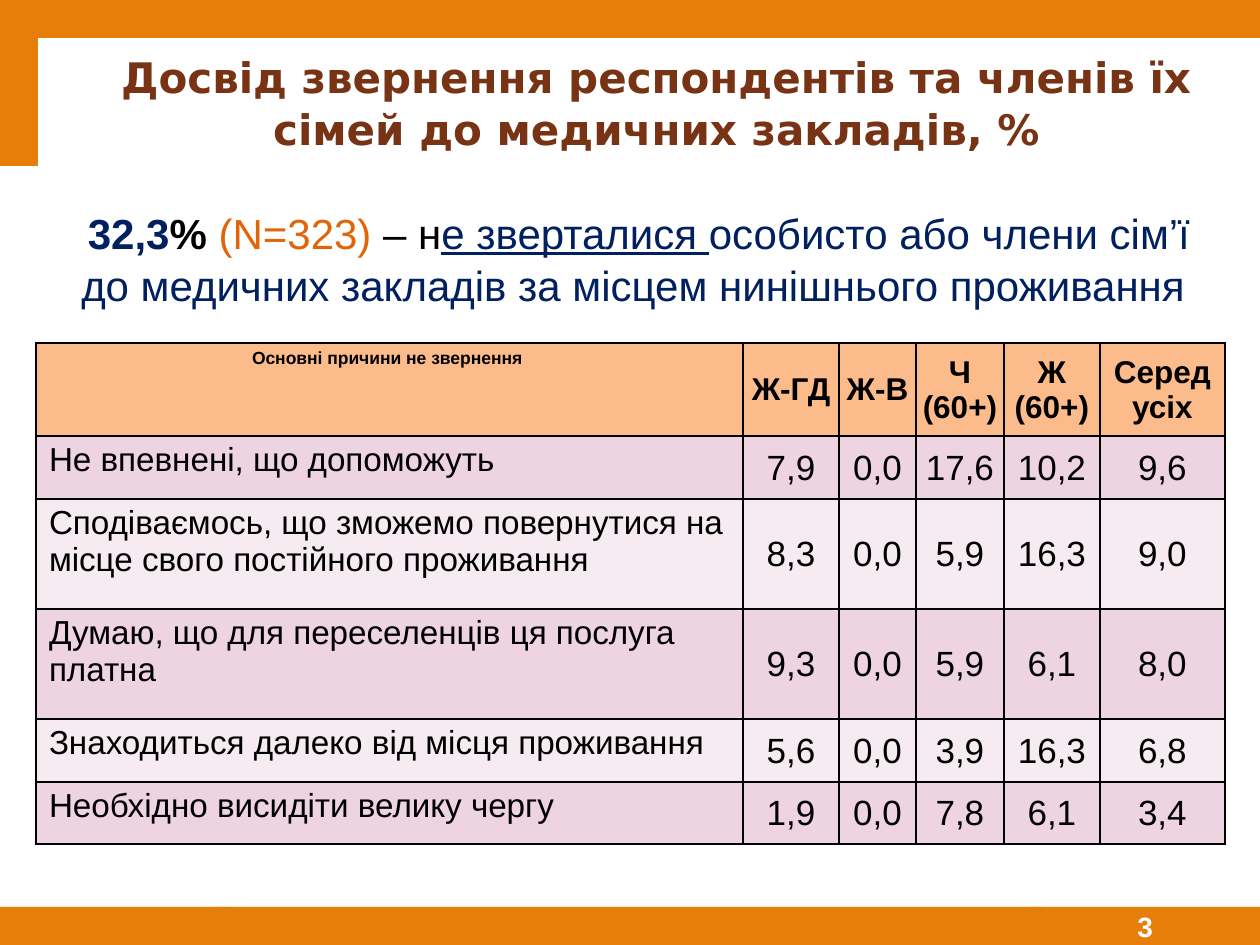
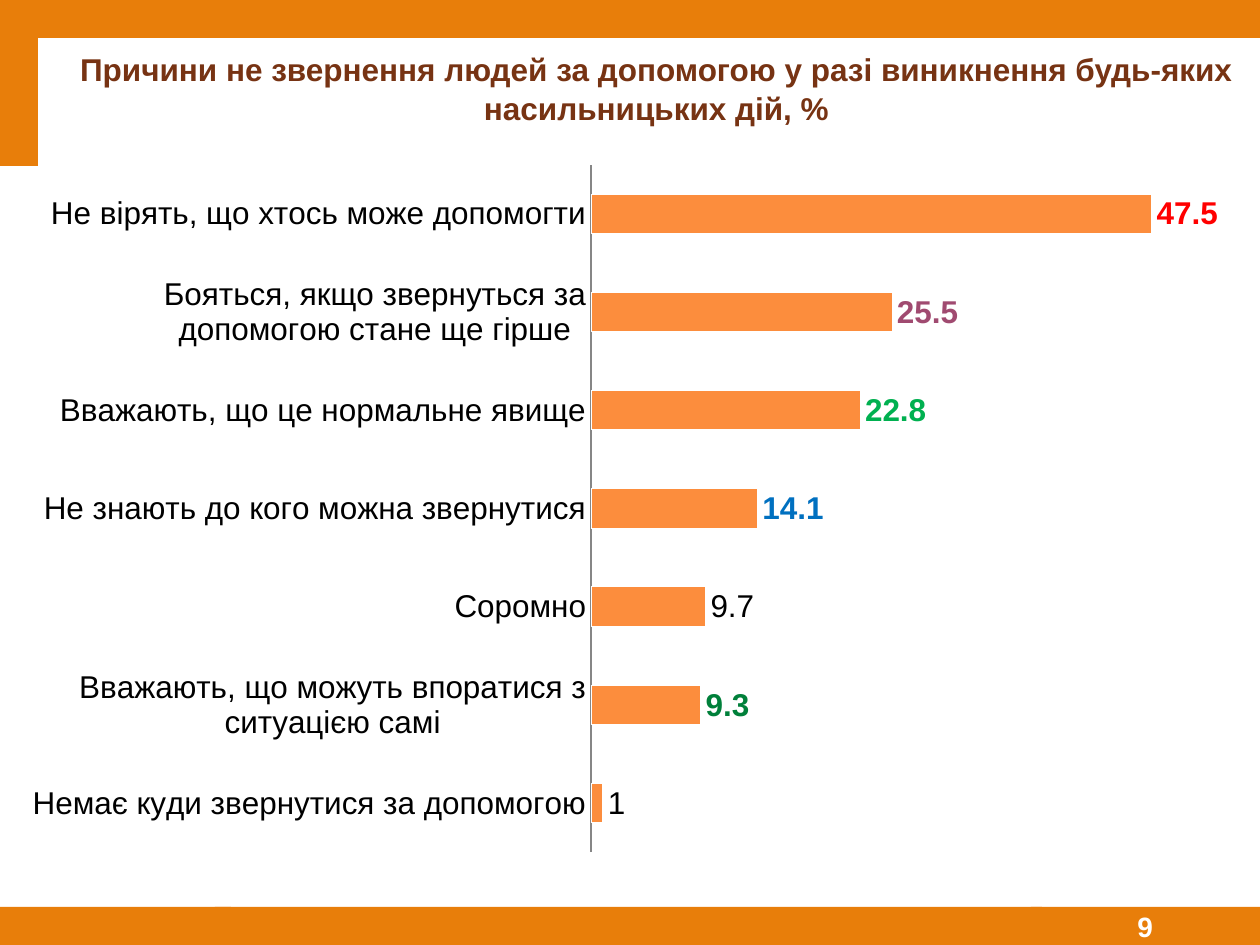
"""Build two survey slides: a table of reasons and a bar chart of reasons."""
from lxml import etree
from pptx import Presentation, util as u
from pptx.chart.data import CategoryChartData
from pptx.dml.color import RGBColor
from pptx.enum import chart as charts, shapes, text
from pptx.oxml import parse_xml
from pptx.oxml.ns import nsdecls, qn

ORANGE = RGBColor(0xE8, 0x7E, 0x0A)
BROWN = RGBColor(0x77, 0x33, 0x13)
NAVY = RGBColor(0x00, 0x20, 0x60)
RUST = RGBColor(0xE3, 0x64, 0x06)
BLACK = RGBColor(0x00, 0x00, 0x00)
WHITE = RGBColor(0xFF, 0xFF, 0xFF)
GREY = RGBColor(0x86, 0x86, 0x86)
PEACH = RGBColor(0xFC, 0xBB, 0x8B)
PINK = RGBColor(0xED, 0xD4, 0xE0)
PALE_PINK = RGBColor(0xF6, 0xEB, 0xF0)
BAR_ORANGE = RGBColor(0xFC, 0x8D, 0x3D)
RED = RGBColor(0xFF, 0x00, 0x00)
PLUM = RGBColor(0xA0, 0x4A, 0x70)
GREEN = RGBColor(0x00, 0xB0, 0x50)
BLUE = RGBColor(0x00, 0x70, 0xC0)
DARK_GREEN = RGBColor(0x00, 0x80, 0x3A)

BANDS = [(0, 907, 231, 38), (215, 907, 827, 38), (0, 0, 1260, 38), (0, 37, 38, 129)]
NUMBER_BAND = (1031, 907, 229, 38)

VISITS = {
    "title": "Досвід звернення респондентів та членів їх сімей до медичних закладів, %",
    "title_box": (38, 38, 1222, 127),
    "title_format": {"size": 24, "font": "DejaVu Sans"},
    "number": "3",
}
SUMMARY_BOX = (52, 168, 1174, 146)
SUMMARY = [
    ("32,3", {"color": NAVY, "bold": True}),
    ("% ", {"bold": True}),
    ("(N=323) ", {"color": RUST}),
    ("– н", {}),
    ("е зверталися ", {"color": NAVY, "underline": True}),
    ("особисто або члени сім’ї до медичних закладів за місцем нинішнього проживання ",
     {"color": NAVY}),
]
TABLE_CORNER = (36, 343)
COLUMN_WIDTHS = [707, 96, 77, 88, 96, 125]
ROW_HEIGHTS = [93, 63, 110, 110, 63, 62]
REASON_ROWS = [
    ("Основні причини не звернення ", "Ж-ГД", "Ж-В", "Ч (60+)", "Ж (60+)", "Серед усіх"),
    ("Не впевнені, що допоможуть", "7,9", "0,0", "17,6", "10,2", "9,6"),
    ("Сподіваємось, що зможемо повернутися на місце свого постійного проживання",
     "8,3", "0,0", "5,9", "16,3", "9,0"),
    ("Думаю, що для переселенців ця послуга платна", "9,3", "0,0", "5,9", "6,1", "8,0"),
    ("Знаходиться далеко від місця проживання", "5,6", "0,0", "3,9", "16,3", "6,8"),
    ("Необхідно висидіти велику чергу", "1,9", "0,0", "7,8", "6,1", "3,4"),
]

VIOLENCE = {
    "title": "Причини не звернення людей за допомогою у разі виникнення "
             "будь-яких насильницьких дій, %",
    "title_box": (38, 38, 1222, 100),
    "title_format": {"size": 18},
    "number": "9",
}
CHART_BOX = (26, 142, 1192, 733)
PLOT_LAYOUT = {"x": 0.475, "y": 0.031, "w": 0.496, "h": 0.938}
CHART_ROWS = [
    ("Немає куди звернутися за допомогою", 1, None),
    ("Вважають, що можуть впоратися з ситуацією самі", 9.3, DARK_GREEN),
    ("Соромно", 9.7, None),
    ("Не знають до кого можна звернутися", 14.1, BLUE),
    ("Вважають, що це нормальне явище", 22.8, GREEN),
    ("Бояться, якщо звернуться за допомогою стане ще гірше", 25.5, PLUM),
    ("Не вірять, що хтось може допомогти", 47.5, RED),
]


def px(length):
    return u.Emu(round(length * 914400 / 126))


def place(box):
    return [px(length) for length in box]


def write(frame, content, size=18, font="Arial", color=BLACK, bold=False, underline=False,
          align=text.PP_ALIGN.CENTER, spacing=None):
    """Write a string, or (string, overrides) runs, as one paragraph."""
    para = frame.paragraphs[0]
    para.alignment = align
    if spacing:
        para.line_spacing = spacing
    base = {"color": color, "bold": bold, "underline": underline}
    runs = [(content, {})] if isinstance(content, str) else content
    for words, changes in runs:
        style = {**base, **changes}
        span = para.add_run()
        span.text = words
        span.font.size = u.Pt(size)
        span.font.name = font
        span.font.bold = style["bold"]
        span.font.underline = style["underline"]
        span.font.color.rgb = style["color"]


def set_margins(target, left, top, right, bottom):
    target.margin_left, target.margin_top = px(left), px(top)
    target.margin_right, target.margin_bottom = px(right), px(bottom)


def add_text(page, box, content, margins, anchor=text.MSO_ANCHOR.MIDDLE, **style):
    frame = page.shapes.add_textbox(*place(box)).text_frame
    frame.word_wrap = True
    frame.vertical_anchor = anchor
    set_margins(frame, *margins)
    write(frame, content, **style)


def add_band(page, box):
    band = page.shapes.add_shape(shapes.MSO_SHAPE.RECTANGLE, *place(box))
    band.shadow.inherit = False
    band.fill.solid()
    band.fill.fore_color.rgb = ORANGE
    band.line.fill.background()
    return band


def add_page(deck, facts):
    page = deck.slides.add_slide(deck.slide_layouts[6])
    for box in BANDS:
        add_band(page, box)
    add_text(page, facts["title_box"], facts["title"], (28, 6, 13, 6),
             color=BROWN, bold=True, spacing=1.04, **facts["title_format"])
    frame = add_band(page, NUMBER_BAND).text_frame
    frame.vertical_anchor = text.MSO_ANCHOR.MIDDLE
    set_margins(frame, 0, 0, 107, 0)
    write(frame, facts["number"], size=16, color=WHITE, bold=True, align=text.PP_ALIGN.RIGHT)
    return page


def outline_cell(cell):
    props = cell._tc.get_or_add_tcPr()
    for side in ("lnL", "lnR", "lnT", "lnB"):
        line = etree.SubElement(props, qn(f"a:{side}"), w=str(u.Pt(1)))
        fill = etree.SubElement(line, qn("a:solidFill"))
        etree.SubElement(fill, qn("a:srgbClr"), val=str(BLACK))


def add_reason_table(page):
    size = (sum(COLUMN_WIDTHS), sum(ROW_HEIGHTS))
    table = page.shapes.add_table(len(REASON_ROWS), len(COLUMN_WIDTHS),
                                  *place(TABLE_CORNER + size)).table
    for column, width in zip(table.columns, COLUMN_WIDTHS):
        column.width = px(width)
    for r, (values, height) in enumerate(zip(REASON_ROWS, ROW_HEIGHTS)):
        table.rows[r].height = px(height)
        header = r == 0
        for c, value in enumerate(values):
            cell = table.cell(r, c)
            outline_cell(cell)
            cell.fill.solid()
            cell.fill.fore_color.rgb = PEACH if header else PINK if r % 2 else PALE_PINK
            align = text.PP_ALIGN.CENTER
            if c == 0:
                size = 10 if header else 19
                set_margins(cell, 13, 6, 13, 6)
                if not header:
                    align = text.PP_ALIGN.LEFT
            else:
                size = 18 if header else 20
                cell.vertical_anchor = text.MSO_ANCHOR.MIDDLE
                set_margins(cell, 1, 1, 1, 0)
            write(cell.text_frame, value, size=size, bold=header, align=align)


def set_plot_layout(chart):
    plot_area = chart._chartSpace.chart.plotArea
    for old in plot_area.findall(qn("c:layout")):
        plot_area.remove(old)
    modes = '<c:layoutTarget val="inner"/><c:xMode val="edge"/><c:yMode val="edge"/>'
    sizes = "".join(f'<c:{key} val="{value}"/>' for key, value in PLOT_LAYOUT.items())
    plot_area.insert(0, parse_xml(
        f'<c:layout {nsdecls("c")}><c:manualLayout>{modes}{sizes}</c:manualLayout></c:layout>'))


def add_reason_chart(page):
    data = CategoryChartData()
    data.categories = [name for name, _, _ in CHART_ROWS]
    data.add_series("Series 1", [value for _, value, _ in CHART_ROWS])
    chart = page.shapes.add_chart(charts.XL_CHART_TYPE.BAR_CLUSTERED,
                                  *place(CHART_BOX), data).chart
    chart.has_legend = False
    chart.has_title = False
    chart.font.size = u.Pt(18)
    chart.font.name = "Arial"
    chart.font.color.rgb = BLACK
    set_plot_layout(chart)

    names = chart.category_axis
    names.major_tick_mark = charts.XL_TICK_MARK.NONE
    names.format.line.color.rgb = GREY
    names.format.line.width = u.Pt(1)
    scale = chart.value_axis
    scale.minimum_scale, scale.maximum_scale = 0, 50
    scale.has_major_gridlines = False
    scale.visible = False

    plot = chart.plots[0]
    plot.vary_by_categories = False
    plot.gap_width, plot.overlap = 150, -25
    plot.has_data_labels = True
    plot.data_labels.show_value = True
    plot.data_labels.position = charts.XL_LABEL_POSITION.OUTSIDE_END
    bars = plot.series[0]
    bars.format.fill.solid()
    bars.format.fill.fore_color.rgb = BAR_ORANGE
    bars.format.line.color.rgb = WHITE
    for index, (_, _, color) in enumerate(CHART_ROWS):
        if color is not None:
            label = bars.points[index].data_label
            label.font.size = u.Pt(18)
            label.font.name = "Arial"
            label.font.bold = True
            label.font.color.rgb = color
            label.position = charts.XL_LABEL_POSITION.OUTSIDE_END
    labels = bars.data_labels
    labels.show_value = True
    labels.position = charts.XL_LABEL_POSITION.OUTSIDE_END


def main():
    deck = Presentation()
    deck.slide_width, deck.slide_height = px(1260), px(945)
    visits = add_page(deck, VISITS)
    add_text(visits, SUMMARY_BOX, SUMMARY, (13, 37, 13, 6), anchor=text.MSO_ANCHOR.TOP,
             size=24, spacing=1.04)
    add_reason_table(visits)
    add_reason_chart(add_page(deck, VIOLENCE))
    deck.save("out.pptx")


if __name__ == "__main__":
    main()
